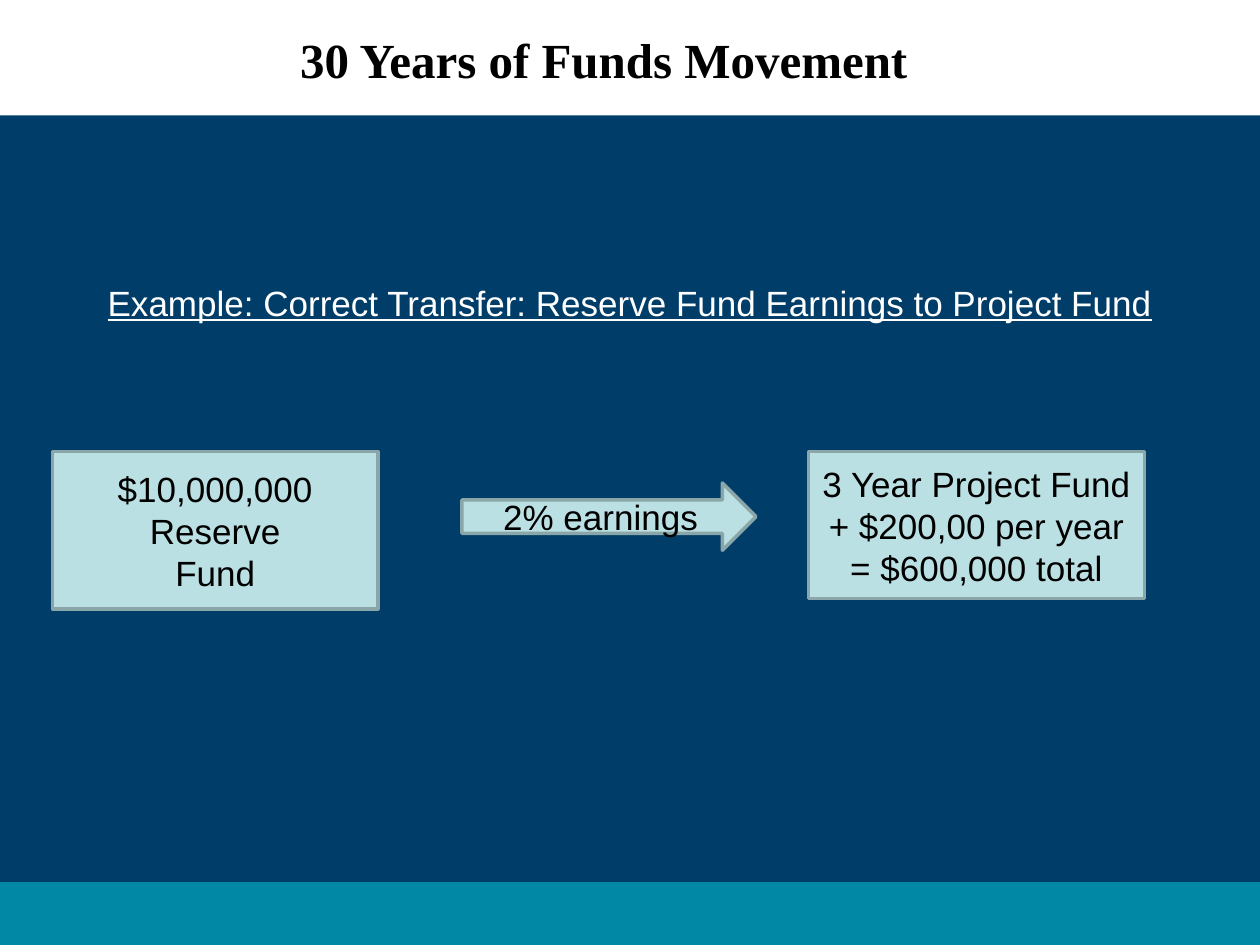
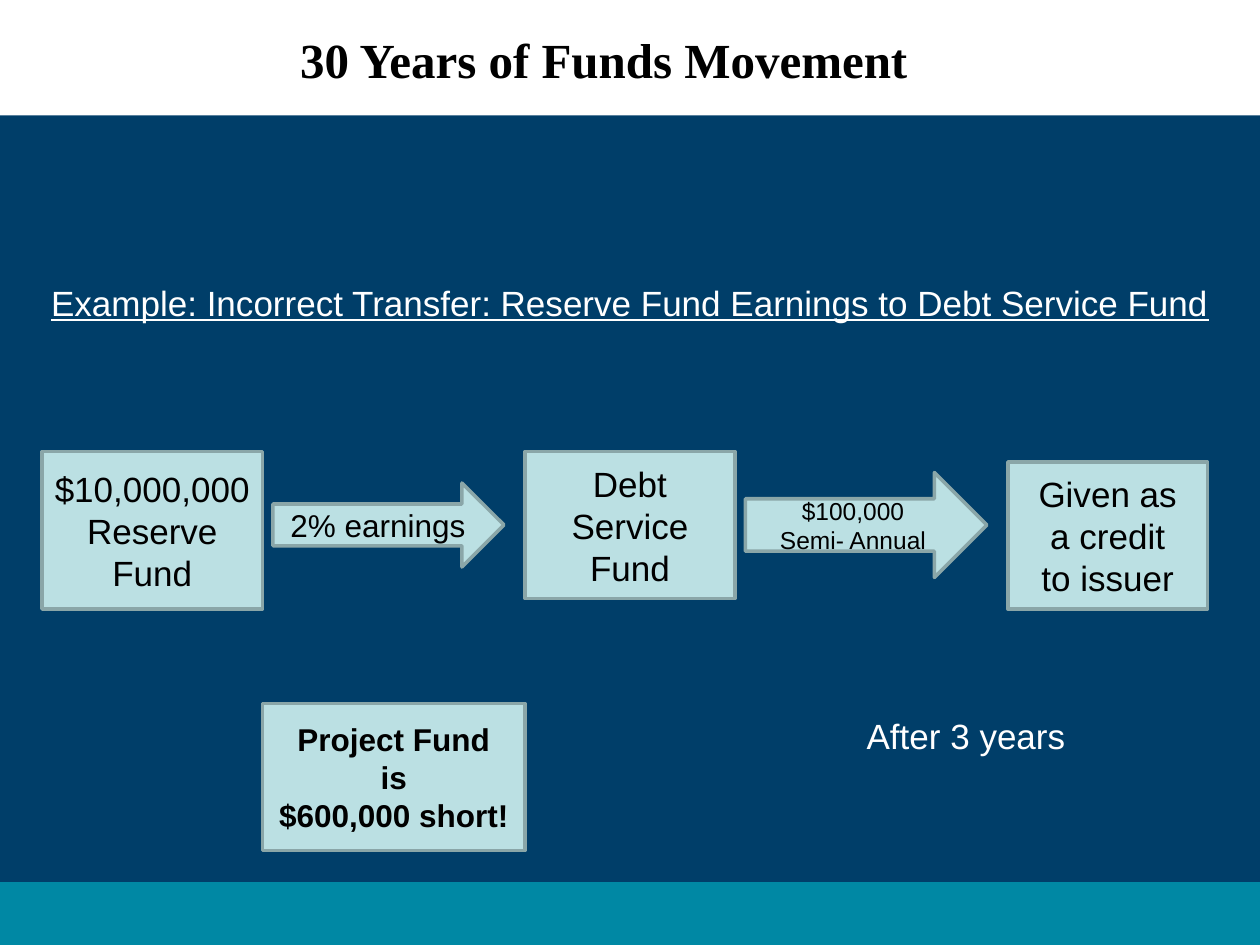
from dataclasses import dataclass

from pptx import Presentation
from pptx.dml.color import RGBColor
from pptx.enum.shapes import MSO_SHAPE
from pptx.enum.text import MSO_ANCHOR, PP_ALIGN
from pptx.util import Emu, Pt

RECT = MSO_SHAPE.RECTANGLE
ARROW = MSO_SHAPE.RIGHT_ARROW
MIDDLE = MSO_ANCHOR.MIDDLE
CENTER = PP_ALIGN.CENTER

PX = 7620
SLIDE_W, SLIDE_H = 1200, 900
ROW_TOP = 430


@dataclass(frozen=True)
class Theme:
    navy: str = "003E69"
    teal: str = "0088A4"
    box: str = "BBE0E3"
    border: str = "8AA6A8"
    ink: str = "000000"
    light: str = "FFFFFF"
    title_font: str = "Times New Roman"
    body_font: str = "Arial"
    title_size: int = 28
    body_size: int = 20
    label_size: int = 18
    small_size: int = 14
    border_width: int = 2


THEME = Theme()


@dataclass(frozen=True)
class Area:
    x: int
    y: int
    w: int
    h: int

    def emu(self) -> tuple[Emu, ...]:
        return tuple(Emu(v * PX) for v in (self.x, self.y, self.w, self.h))


@dataclass(frozen=True)
class Node:
    area: Area
    text: str
    kind: MSO_SHAPE = RECT
    size: int = THEME.body_size
    bold: bool = False


@dataclass(frozen=True)
class Example:
    heading: str
    nodes: tuple[Node, ...]
    note: str = ""


TITLE = "30 Years of Funds Movement"
TITLE_AREA = Area(0, 22, 1150, 68)
HEADING_AREA = Area(0, 262, SLIDE_W, 52)
NOTE_AREA = Area(810, 678, 220, 44)
FOOTER_AREA = Area(0, 836, SLIDE_W, 64)
PANEL_AREA = Area(0, 110, SLIDE_W, 730)
RESERVE = "$10,000,000\nReserve\nFund"

EXAMPLES = (
    Example(
        "Example: Correct Transfer: Reserve Fund Earnings to Project Fund",
        (
            Node(Area(50, ROW_TOP, 310, 150), RESERVE),
            Node(Area(440, 460, 280, 64), "2% earnings", ARROW),
            Node(Area(770, ROW_TOP, 320, 140),
                 "3 Year Project Fund\n+ $200,00 per year\n= $600,000 total"),
        ),
    ),
    Example(
        "Example: Incorrect Transfer: Reserve Fund Earnings to Debt Service Fund",
        (
            Node(Area(40, ROW_TOP, 210, 150), RESERVE),
            Node(Area(260, 460, 220, 80), "2% earnings", ARROW, THEME.label_size),
            Node(Area(500, ROW_TOP, 200, 140), "Debt\nService\nFund"),
            Node(Area(710, 450, 230, 100), "$100,000\nSemi- Annual", ARROW,
                 THEME.small_size),
            Node(Area(960, 440, 190, 140), "Given as\na credit\nto issuer"),
            Node(Area(250, 670, 250, 140), "Project Fund\nis\n$600,000 short!",
                 size=THEME.label_size, bold=True),
        ),
        "After 3 years",
    ),
)


def rgb(color: str) -> RGBColor:
    return RGBColor.from_string(color)


def write(sp, text: str, *, size: int = THEME.body_size, color: str = THEME.ink,
          font: str = THEME.body_font, bold: bool = False,
          underline: bool = False, wrap: bool = False) -> None:
    tf = sp.text_frame
    tf.word_wrap = wrap
    tf.vertical_anchor = MIDDLE
    for i, line in enumerate(text.split("\n")):
        p = tf.add_paragraph() if i else tf.paragraphs[0]
        p.alignment = CENTER
        r = p.add_run()
        r.text = line
        r.font.name = font
        r.font.size = Pt(size)
        r.font.bold = bold
        r.font.underline = underline
        r.font.color.rgb = rgb(color)


def add_label(s, area: Area, text: str, **style) -> None:
    write(s.shapes.add_textbox(*area.emu()), text, wrap=True, **style)


def add_filled(s, area: Area, fill: str, kind: MSO_SHAPE = RECT, border: str = ""):
    sp = s.shapes.add_shape(kind, *area.emu())
    sp.shadow.inherit = False
    sp.fill.solid()
    sp.fill.fore_color.rgb = rgb(fill)
    if border:
        sp.line.color.rgb = rgb(border)
        sp.line.width = Pt(THEME.border_width)
    else:
        sp.line.fill.background()
    return sp


def add_node(s, node: Node) -> None:
    sp = add_filled(s, node.area, THEME.box, node.kind, THEME.border)
    write(sp, node.text, size=node.size, bold=node.bold)


def add_example(prs, example: Example) -> None:
    s = prs.slides.add_slide(prs.slide_layouts[6])
    add_filled(s, FOOTER_AREA, THEME.teal)
    add_filled(s, PANEL_AREA, THEME.navy)
    add_label(s, TITLE_AREA, TITLE, size=THEME.title_size,
              font=THEME.title_font, bold=True)
    add_label(s, HEADING_AREA, example.heading, color=THEME.light, underline=True)
    for node in example.nodes:
        add_node(s, node)
    if example.note:
        add_label(s, NOTE_AREA, example.note, color=THEME.light)


def main() -> None:
    prs = Presentation()
    prs.slide_width = Emu(SLIDE_W * PX)
    prs.slide_height = Emu(SLIDE_H * PX)
    for example in EXAMPLES:
        add_example(prs, example)
    prs.save("out.pptx")


if __name__ == "__main__":
    main()
